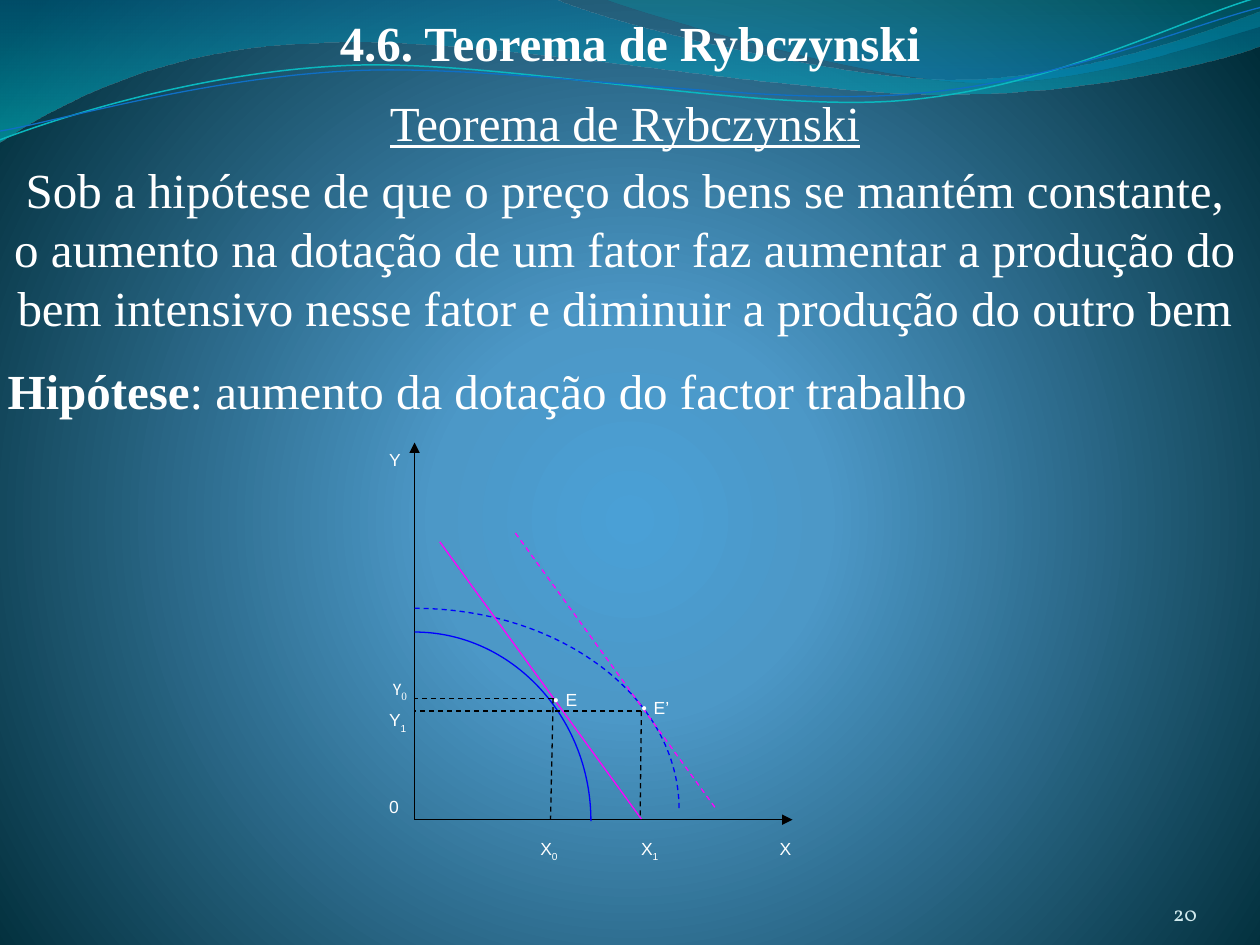
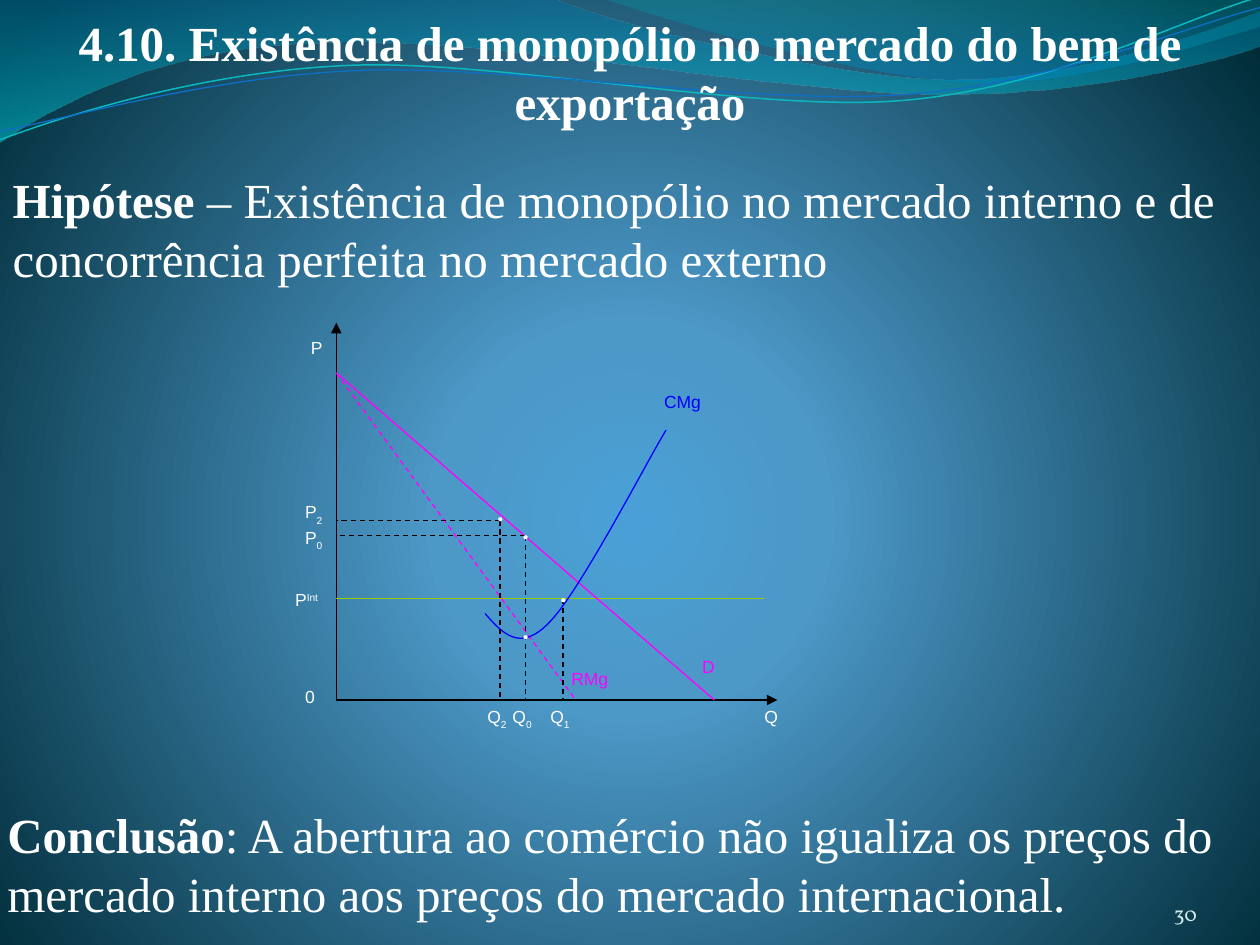
"""Builds two trade theory slides with their economic diagrams."""
from pptx import Presentation
from pptx.dml.color import RGBColor
from pptx.enum.dml import MSO_LINE
from pptx.enum.shapes import MSO_CONNECTOR
from pptx.enum.text import MSO_ANCHOR, MSO_AUTO_SIZE, PP_ALIGN
from pptx.oxml import parse_xml
from pptx.oxml.ns import nsdecls, qn
from pptx.util import Pt

DASH = MSO_LINE.DASH
STRAIGHT = MSO_CONNECTOR.STRAIGHT
TOP, MIDDLE, BOTTOM = MSO_ANCHOR.TOP, MSO_ANCHOR.MIDDLE, MSO_ANCHOR.BOTTOM
LEFT, CENTER, RIGHT = PP_ALIGN.LEFT, PP_ALIGN.CENTER, PP_ALIGN.RIGHT
GROW, FIXED = MSO_AUTO_SIZE.SHAPE_TO_FIT_TEXT, MSO_AUTO_SIZE.NONE

WHITE, BLACK, BLUE, PINK, LIME = "FFFFFF", "000000", "0000FF", "FF00FF", "99CC00"
SERIF = {"name": "Times New Roman", "size": Pt(28), "color": WHITE}
SMALL = {"name": "Arial", "size": Pt(10), "color": WHITE}
DOT = {**SMALL, "name": "Times New Roman"}
PAGE = {"name": "Vollkorn", "size": Pt(12), "color": "D1EAEE"}
BOLD = {"bold": True}
SIDES = ("left", "top", "right", "bottom")
INSET = (7.2, 3.6, 7.2, 3.6)


def rgb(code):
    return RGBColor.from_string(code)


def grad(stops, tail):
    marks = "".join(
        f'<a:gs pos="{pos * 1000}"><a:srgbClr val="{code}">'
        f'<a:alpha val="{alpha * 1000}"/></a:srgbClr></a:gs>'
        for pos, code, alpha in stops)
    return f'<a:gradFill {nsdecls("a")} rotWithShape="1"><a:gsLst>{marks}</a:gsLst>{tail}</a:gradFill>'


def bend(props, chains):
    steps = list(props.iter(qn("a:lnTo")))
    spot = 0
    for chain in chains:
        for i in range(spot, spot + len(chain) - 1, 3):
            cubic = parse_xml(f'<a:cubicBezTo {nsdecls("a")}/>')
            steps[i].addprevious(cubic)
            for step in steps[i:i + 3]:
                cubic.append(step[0])
                step.getparent().remove(step)
        spot += len(chain)


class Deck:
    def __init__(self):
        self.prs = Presentation()
        self.prs.slide_width, self.prs.slide_height = Pt(720), Pt(540)
        self.slide = None
        self.tag = None

    def start(self, title, high, page, tag):
        self.tag = tag
        self.slide = self.prs.slides.add_slide(self.prs.slide_layouts[1])
        self.fill(self.slide.shapes.title, (0, 3.6, 720, high), [(title, BOLD)], align=CENTER)
        self.text((624.2, 500.4, 59.8, 28.8), [(page, {})], PAGE,
                  BOTTOM, RIGHT, FIXED, inset=(0, 0, 0, 0))

    def fill(self, shape, box, runs, style=SERIF, anchor=TOP, align=LEFT, size=GROW, inset=INSET):
        for key, value in zip(("left", "top", "width", "height"), box):
            setattr(shape, key, Pt(value))
        frame = shape.text_frame
        form = {"word_wrap": True, "auto_size": size, "vertical_anchor": anchor}
        form.update({f"margin_{side}": Pt(gap) for side, gap in zip(SIDES, inset)})
        for key, value in form.items():
            setattr(frame, key, value)
        para = frame.paragraphs[0]
        para.alignment, para.space_before = align, Pt(0)
        for words, extra in runs:
            run = para.add_run()
            run.text = words
            look = {**style, **extra}
            run.font.color.rgb = rgb(look.pop("color"))
            base = look.pop("base", None)
            if base:
                run.font._element.set("baseline", str(base * 1000))
            for key, value in look.items():
                setattr(run.font, key, value)
        return para

    def text(self, box, runs, *form, **more):
        shape = self.slide.shapes.add_textbox(0, 0, 0, 0)
        self.fill(shape, box, runs, *form, **more)

    def body(self, box, runs):
        para = self.fill(self.slide.placeholders[1], box, runs, anchor=MIDDLE)
        props = para._p.get_or_add_pPr()
        for key in ("marL", "indent"):
            props.set(key, "0")
        props.append(parse_xml(f'<a:buNone {nsdecls("a")}/>'))

    def label(self, x, y, words, sub="", base=-30, color=WHITE):
        runs = [(words, {"color": color})]
        if sub:
            runs.append((sub, {"base": base}))
        self.text((x, y, *self.tag), runs, SMALL, size=FIXED)

    def dots(self, spots, inset=INSET):
        for x, y in spots:
            self.text((x, y, self.tag[0], 28.8), [("•", {})], DOT, size=FIXED, inset=inset)

    def pen(self, line, color, dash=None, width=0.75):
        line.color.rgb = rgb(color)
        line.width = Pt(width)
        if dash:
            line.dash_style = dash

    def line(self, start, end, color, dash=None, arrow=False):
        link = self.slide.shapes.add_connector(STRAIGHT, *map(Pt, start + end))
        self.pen(link.line, color, dash)
        props = link._element.spPr
        if arrow:
            props.find(qn("a:ln")).append(parse_xml(f'<a:tailEnd {nsdecls("a")} type="triangle"/>'))
        props.append(parse_xml(f'<a:effectLst {nsdecls("a")}/>'))

    def axes(self, x, y, top, right):
        for end in ((x, top), (right, y)):
            self.line((x, y), end, BLACK, arrow=True)

    def guide(self, x, y, left, foot):
        for end in (left, foot):
            self.line((x, y), end, BLACK, DASH)

    def curve(self, chains, color=None, dash=None, width=0.75, stops=None):
        spots = [tuple(map(Pt, spot)) for chain in chains for spot in chain]
        build = self.slide.shapes.build_freeform(*spots[0])
        build.add_line_segments(spots[1:], close=bool(stops))
        shape = build.convert_to_shape()
        shape.shadow.inherit = False
        shape.fill.background()
        props = shape._element.spPr
        bend(props, chains)
        if stops:
            shape.line.fill.background()
            props.replace(props.find(qn("a:noFill")),
                          parse_xml(grad(stops, '<a:lin ang="5400000" scaled="1"/>')))
        else:
            self.pen(shape.line, color, dash, width)
        return shape

    def dress(self):
        base = self.prs.slide_master
        root = base._element.cSld
        old = root.find(qn("p:bg"))
        if old is not None:
            root.remove(old)
        glow = grad([(0, "4AA0D6", 100), (25, "4C98C7", 100), (100, "002C38", 100)],
                    '<a:path path="circle"><a:fillToRect l="10000" t="110000" r="10000" b="100000"/></a:path>')
        root.insert(0, parse_xml(f'<p:bg {nsdecls("p")}><p:bgPr>{glow}'
                                 f'<a:effectLst {nsdecls("a")}/></p:bgPr></p:bg>'))
        wave = [
            [(0, 0)],
            [(316.8, -0.7), (342.7, 12.2), (478.1, 45.4), (545.8, 45.4),
             (614.2, 45.4), (689.8, 18.7), (720, 6.5)],
            [(720.7, 25.9), (707.8, 31.7), (626.4, 54.7), (537.1, 54),
             (447.8, 54), (275, 20.2), (185, 24.5), (92.9, 25.9), (33.1, 59.8), (-0.7, 81.4)]]
        crest = [
            [(344.9, -0.7), (366.5, 7.9), (491, 44.6), (553.7, 46.8),
             (616.3, 49.7), (691.9, 23), (720, 15.1)],
            [(720, 0)]]
        teal = [(0, 79.9), (34.6, 67), (113.8, 41), (199.4, 37.4), (284.4, 33.8),
                (427, 64.1), (513.4, 57.6), (599.8, 51.1), (675.4, 10.8), (718.6, -1.4)]
        navy = [(0, 74.9), (33.8, 69.1), (118.1, 43.9), (203.8, 40.3), (290.2, 36.7),
                (429.8, 60.5), (516.2, 54), (601.9, 48.2), (677.5, 15.1), (720, 4.3)]
        bands = [
            self.curve(wave, stops=[(0, "0074A1", 45), (100, "00C6CF", 55)]),
            self.curve(crest, stops=[(0, "00A1A9", 30), (80, "008BBF", 45)]),
            self.curve([teal], "0AB8BF", width=0.85),
            self.curve([navy], "0F6FC6")]
        for spot, band in enumerate(bands, 2):
            base.shapes._spTree.insert(spot, band._element)


def growth(deck):
    deck.start("4.6. Teorema de Rybczynski", 41, "20", (57.6, 21.6))
    deck.dress()
    deck.text((-2.9, 49, 720, 41), [("Teorema de Rybczynski", {"underline": True})],
              anchor=MIDDLE, align=CENTER)
    deck.text((-2.4, 87.1, 719, 108.7), [(
        "Sob a hipótese de que o preço dos bens se mantém constante, o aumento na dotação "
        "de um fator faz aumentar a produção do bem intensivo nesse fator e diminuir a "
        "produção do outro bem", {})], anchor=MIDDLE, align=CENTER)
    deck.body((-2.9, 202.3, 720, 41),
              [("Hipótese", BOLD), (": aumento da dotação do factor trabalho", {})])
    x, y = 236.9, 468.4
    deck.axes(x, y, 252.9, 452.9)
    deck.curve([[(x, 361.2), (292.3, 361.2), (337.7, 409.7), (337.7, 469.2)]], BLUE)
    deck.curve([[(x, 347.6), (320.4, 347.6), (388.1, 398.7), (388.1, 462.6)]], BLUE, DASH)
    deck.line((251.3, 309.6), (366.5, 468), PINK)
    deck.line((294.5, 304.6), (409.7, 463), PINK, DASH)
    for right, high, foot in ((316.1, 399, 314.6), (366.5, 406.3, 365.8)):
        deck.guide(right, high, (x, high), (foot, y))
    deck.dots([(308.9, 390.2), (359.3, 394.6)])
    for item in ((316.1, 390.2, "E"), (366.5, 394.6, "E’"), (438.5, 475.2, "X"),
                 (215.3, 451.4, "0"), (215.3, 253, "Y"), (301.7, 475.2, "X", "0"),
                 (359.3, 475.2, "X", "1"), (215.3, 401.8, "Y", "1")):
        deck.label(*item)
    deck.text((217.4, 383.2, 57.6, 21.6),
              [("Y", {"name": "Calibri"}), ("0", {"size": Pt(11), "base": -25})], DOT, size=FIXED)


def market(deck):
    deck.start("4.10. Existência de monopólio no mercado do bem de exportação", 74.9, "30", (72, 28.8))
    deck.body((0, 92.9, 720, 74.9), [
        ("Hipótese", BOLD),
        (" – Existência de monopólio no mercado interno e de concorrência perfeita no mercado externo", {})])
    deck.text((-2.9, 455.8, 722.9, 74.9), [
        ("Conclusão", BOLD),
        (": A abertura ao comércio não igualiza os preços do mercado interno aos preços "
         "do mercado internacional.", {})], anchor=MIDDLE)
    x, y, price = 192.2, 400, 342.2
    deck.axes(x, y, 184.5, 444.2)
    deck.line((x, price), (436.6, price), LIME)
    deck.line((x, 213.1), (408.2, y), PINK)
    deck.line((x, 213.1), (329, y), PINK, DASH)
    deck.curve([[(277.2, 350.6), (287.3, 362.2), (297.4, 373), (313.9, 355.7),
                 (331.2, 338.4), (369.4, 264.2), (380.6, 245.8)]], BLUE)
    for right, high in ((300.2, 306.2), (285.8, 297.4)):
        deck.guide(right, high, (x, high), (right, y))
    deck.line((321.8, price), (321.8, y), BLACK, DASH)
    deck.dots([(307.4, 333), (285.8, 354.2), (285.8, 297), (271.4, 286.6)], (12.8, 3.6, 7.2, 3.6))
    for item in ((372.4, 220, "CMg", "", 0, BLUE), (394.1, 371.2, "D", "", 0, PINK),
                 (319.4, 378, "RMg", "", 0, PINK), (161.6, 333, "P", "Int", 30),
                 (167.3, 297.4, "P", "0"), (167.3, 283, "P", "2"), (429.8, 400, "Q"),
                 (307.4, 400, "Q", "1"), (285.8, 400, "Q", "0"),
                 (271.4, 400, "Q", "2"), (167.3, 388.4, "0"), (170.6, 189, "P")):
        deck.label(*item)


def main():
    deck = Deck()
    growth(deck)
    market(deck)
    deck.prs.save("out.pptx")


if __name__ == "__main__":
    main()
